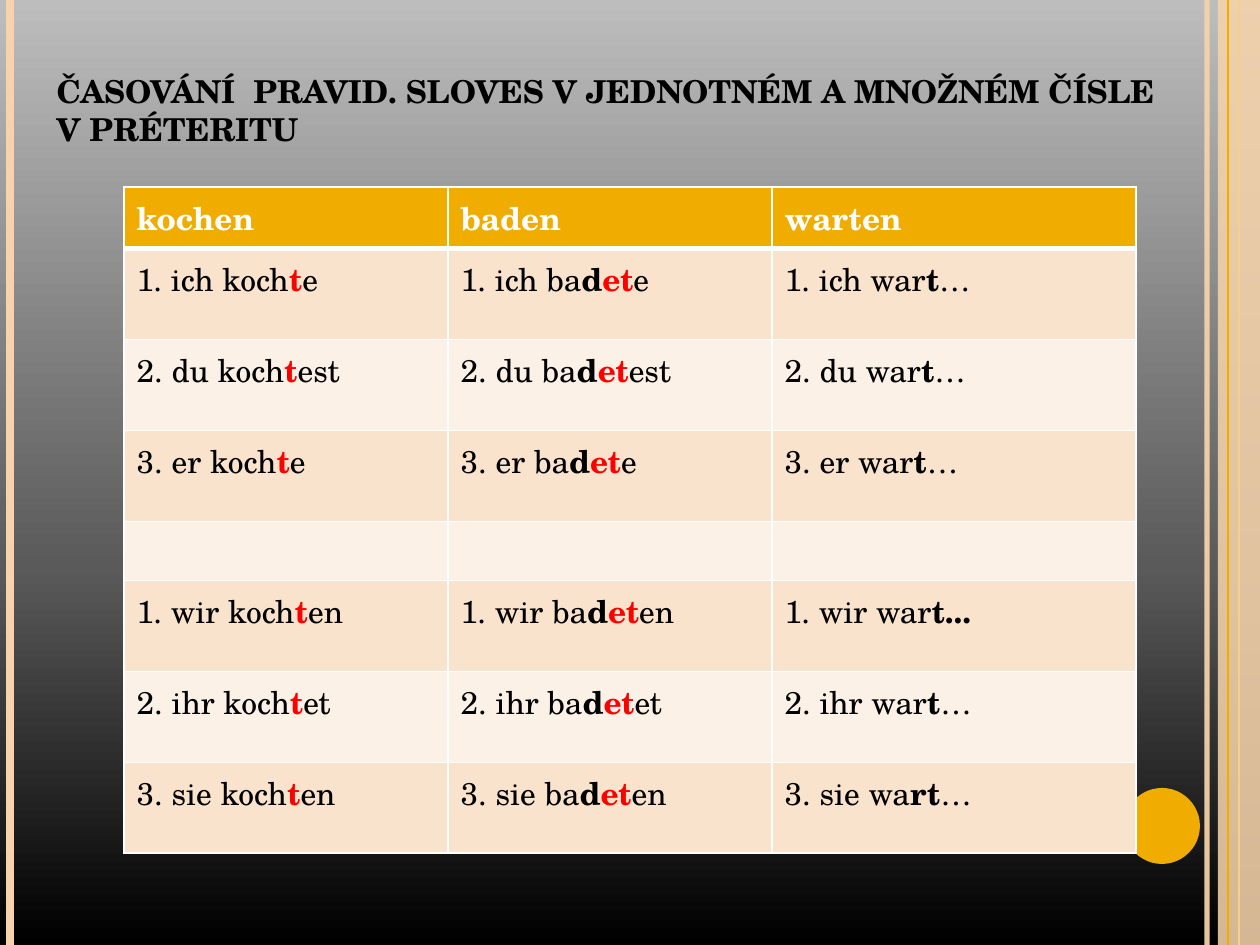
import copy
from pptx import Presentation, util as u
from pptx.dml.color import RGBColor
from pptx.enum import shapes, text
from pptx.oxml import parse_xml
from pptx.oxml.ns import nsdecls, qn

# Content
TITLE = "ČASOVÁNÍ  PRAVID. SLOVES V JEDNOTNÉM A MNOŽNÉM ČÍSLE  V PRÉTERITU"
VERBS = ["kochen", "baden", "warten"]
# subject, ending, (stem, bold part, tail) of warten; None is the empty row
PERSONS = [
    ("1. ich ", "e", ("war", "t", "…")),
    ("2. du ", "est", ("war", "t", "…")),
    ("3. er ", "e", ("war", "t", "…")),
    None,
    ("1. wir ", "en", ("war", "t...", "")),
    ("2. ihr ", "et", ("war", "t", "…")),
    ("3. sie ", "en", ("wa", "rt", "…")),
]
THEME = dict(
    font="TeX Gyre Schola", size=18, ink="000000", mark="FF0000", white="FFFFFF",
    gold="F0AD00", peach="F6D3AB", bands=("F9E3CC", "FCF1E7"),
    backdrop=[(0, "000000"), (0.4, "5A5A5A"), (1, "BDBDBD")],
)

# Layout in px
W, H = 1260, 945
TABLE_X, TABLE_Y = 124, 187
COLS = [324, 324, 364]
HEAD_H, ROW_H, EMPTY_H = 61, 91, 59


def px(n):
    return u.Emu(n * 914400 // 126)


def rgb(c):
    return RGBColor.from_string(c)


def set_alpha(el, percent):
    clr = next(el.iter(qn("a:srgbClr")))
    clr.append(parse_xml(f'<a:alpha {nsdecls("a")} val="{percent * 1000}"/>'))


def add_run(p, words, color, bold=False):
    r = p.add_run()
    r.text = words
    f = r.font
    f.name, f.size, f.bold = THEME["font"], u.Pt(THEME["size"]), bold
    f.color.rgb = rgb(color)


def add_line(s, x, color, width, alpha=None):
    ln = s.shapes.add_connector(shapes.MSO_CONNECTOR.STRAIGHT, px(x), 0, px(x), px(H))
    ln.line.color.rgb = rgb(color)
    ln.line.width = u.Pt(width)
    sp_pr = ln._element.spPr
    if alpha:
        set_alpha(sp_pr, alpha)
    sp_pr.append(parse_xml(f'<a:effectLst {nsdecls("a")}/>'))


def add_plain(s, kind, x, y, w, h, color):
    sp = s.shapes.add_shape(kind, px(x), px(y), px(w), px(h))
    sp.shadow.inherit = False
    sp.fill.solid()
    sp.fill.fore_color.rgb = rgb(color)
    sp.line.fill.background()
    return sp


def style_cell(cell, color, top=1, bottom=1):
    tc_pr = cell._tc.get_or_add_tcPr()
    for side, pt in (("L", 1), ("R", 1), ("T", top), ("B", bottom)):
        tc_pr.append(parse_xml(
            f'<a:ln{side} {nsdecls("a")} w="{pt * 12700}"><a:solidFill>'
            f'<a:srgbClr val="{THEME["white"]}"/></a:solidFill></a:ln{side}>'))
    cell.fill.solid()
    cell.fill.fore_color.rgb = rgb(color)


def cell_runs(person):
    """Runs (words, colour, bold) for each of the three verbs."""
    subject, ending, (stem, bold, tail) = person
    ink, mark = THEME["ink"], THEME["mark"]
    return [
        [(subject + "koch", ink, False), ("t", mark, True), (ending, ink, False)],
        [(subject + "ba", ink, False), ("d", ink, True), ("et", mark, True),
         (ending, ink, False)],
        [(subject + stem, ink, False), (bold, ink, True), (tail, ink, False)],
    ]


prs = Presentation()
prs.slide_width, prs.slide_height = px(W), px(H)
s = prs.slides.add_slide(prs.slide_layouts[5])

# Background gradient, dark at the bottom
fill = s.background.fill
fill.gradient()
fill.gradient_angle = 90
stops = next(s._element.iter(qn("a:gsLst")))
stops.insert(1, copy.deepcopy(stops[0]))
for stop, (pos, color) in zip(fill.gradient_stops, THEME["backdrop"]):
    stop.position = pos
    stop.color.rgb = rgb(color)

# Side stripes and disc
add_line(s, 1207, THEME["peach"], 3, alpha=93)
add_line(s, 10, THEME["peach"], 4.5)
add_line(s, 1239, THEME["gold"], 1.5)
band = add_plain(s, shapes.MSO_SHAPE.RECTANGLE, 1218, 0, 42, H, THEME["peach"])
set_alpha(band._element.spPr, 87)
add_line(s, 1228, THEME["gold"], 0.75)
add_plain(s, shapes.MSO_SHAPE.OVAL, 1124, 788, 76, 76, THEME["gold"])

# Title
title = s.shapes.title
title.left, title.top, title.width, title.height = px(44), px(66), px(1147), px(90)
tf = title.text_frame
tf.word_wrap = True
tf.auto_size = text.MSO_AUTO_SIZE.NONE
tf.vertical_anchor = text.MSO_ANCHOR.TOP
tf.paragraphs[0].alignment = text.PP_ALIGN.LEFT
add_run(tf.paragraphs[0], TITLE, THEME["ink"], True)

# Conjugation table
heights = [HEAD_H] + [ROW_H if person else EMPTY_H for person in PERSONS]
tbl = s.shapes.add_table(len(heights), len(COLS), px(TABLE_X), px(TABLE_Y),
                         px(sum(COLS)), px(sum(heights))).table
for col, w in zip(tbl.columns, COLS):
    col.width = px(w)
for row, h in zip(tbl.rows, heights):
    row.height = px(h)

rows = [[[(verb, THEME["white"], True)] for verb in VERBS]]
rows += [cell_runs(person) if person else [[]] * len(COLS) for person in PERSONS]
for i, row in enumerate(rows):
    color = THEME["bands"][(i - 1) % 2] if i else THEME["gold"]
    for j, runs in enumerate(row):
        cell = tbl.cell(i, j)
        style_cell(cell, color, top=3 if i == 1 else 1, bottom=1 if i else 3)
        p = cell.text_frame.paragraphs[0]
        for words, ink, bold in runs:
            if words:
                add_run(p, words, ink, bold)

prs.save("out.pptx")
